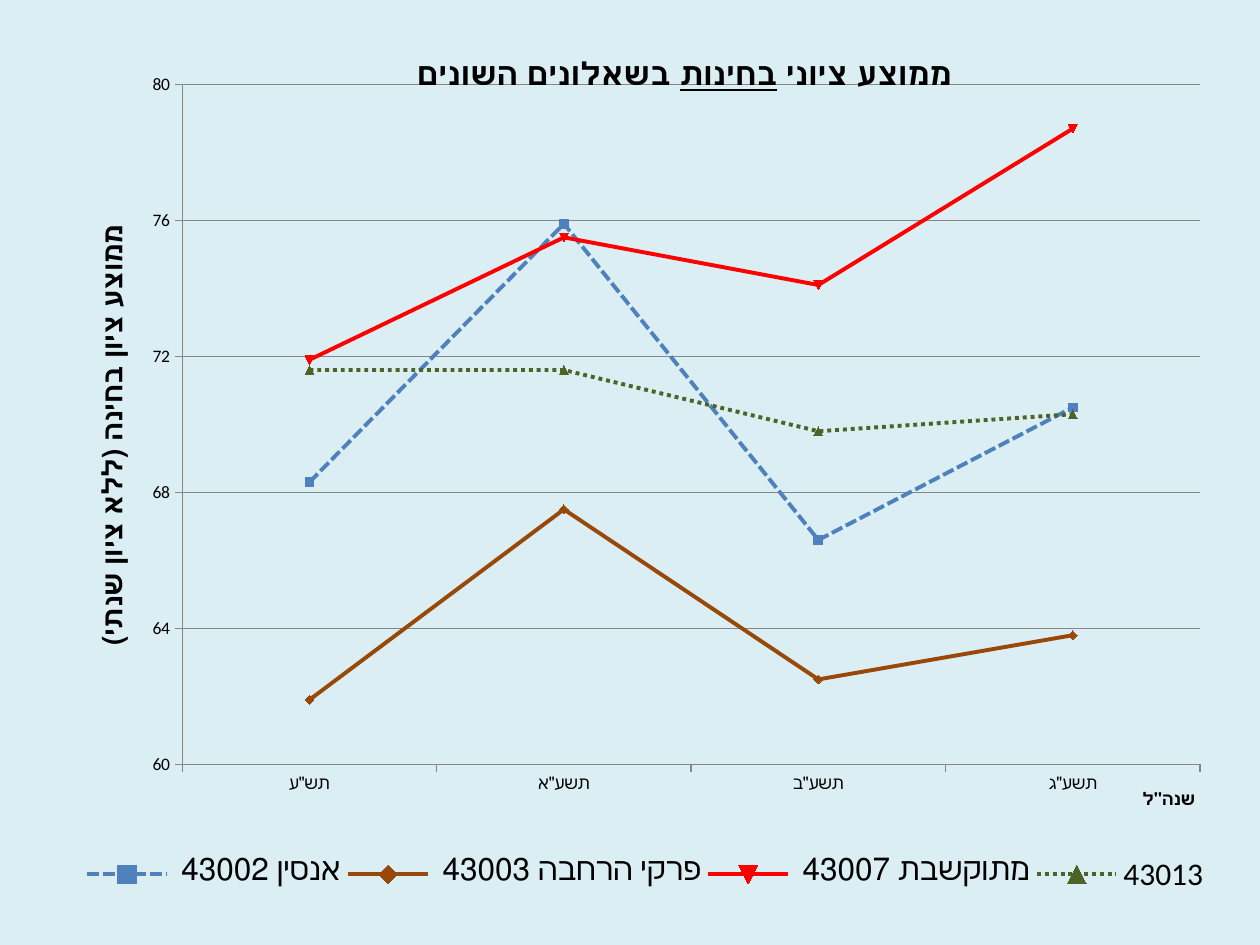
from lxml.etree import SubElement
from pptx import Presentation
from pptx.chart.data import CategoryChartData
from pptx.dml.color import RGBColor
from pptx.enum.chart import XL_CHART_TYPE, XL_LEGEND_POSITION, XL_TICK_MARK
from pptx.enum.dml import MSO_LINE
from pptx.oxml.ns import qn
from pptx.util import Cm, Pt

FONT = "Calibri"
GRAY = "868686"
YEARS = ['תש"ע', 'תשע"א', 'תשע"ב', 'תשע"ג']
EXAMS = [
    (" אנסין 43002", [68.3, 75.9, 66.6, 70.5], "4F81BD", "4F81BD", MSO_LINE.SQUARE_DOT),
    (" פרקי הרחבה 43003", [61.9, 67.5, 62.5, 63.8], "984807", "984807", None),
    (" מתוקשבת 43007", [71.9, 75.5, 74.1, 78.7], "FF0000", "FF0000", None),
    ("43013", [71.6, 71.6, 69.8, 70.3], "4F6228", "77933C", MSO_LINE.ROUND_DOT),
]
SCORE_SCALE = {
    "minimum_scale": 60,
    "maximum_scale": 80,
    "major_unit": 4,
    "has_major_gridlines": True,
    "major_tick_mark": XL_TICK_MARK.OUTSIDE,
}
YEAR_SCALE = {"major_tick_mark": XL_TICK_MARK.OUTSIDE}
LEGEND_FORMAT = {"position": XL_LEGEND_POSITION.BOTTOM, "include_in_layout": False}


def color(hex_value):
    return RGBColor.from_string(hex_value)


def apply_format(target, values):
    for name, value in values.items():
        setattr(target, name, value)


def format_font(font, size, **extra):
    apply_format(font, {"name": FONT, "size": Pt(size), **extra})
    font.color.rgb = color("000000")


def format_line(line, hex_value, width):
    line.color.rgb = color(hex_value)
    line.width = Pt(width)


def place(holder, index, **position):
    old_layout = holder.find(qn("c:layout"))
    if old_layout is not None:
        holder.remove(old_layout)
    layout = SubElement(holder, qn("c:layout"))
    holder.insert(index, layout)
    manual = SubElement(layout, qn("c:manualLayout"))
    if index == 0:
        SubElement(manual, qn("c:layoutTarget")).set("val", "inner")
    for mode in ("xMode", "yMode"):
        SubElement(manual, qn(f"c:{mode}")).set("val", "edge")
    for side, share in position.items():
        SubElement(manual, qn(f"c:{side}")).set("val", str(share))


def write_title(title, parts, size, x, y, rotation=0):
    frame = title.text_frame
    paragraph = frame.paragraphs[0]
    paragraph._p.get_or_add_pPr().set("rtl", "1")
    for text, underline in parts:
        run = paragraph.add_run()
        run.text = text
        format_font(run.font, size, bold=True, underline=underline)
    body = frame._txBody.find(qn("a:bodyPr"))
    body.set("rot", str(rotation * 60000))
    body.set("vert", "horz")
    place(title._element, 1, x=x, y=y)


def format_axis(axis, scale):
    apply_format(axis, scale)
    format_font(axis.tick_labels.font, 10)
    format_line(axis.format.line, GRAY, 0.75)


def format_exam(series, line_color, marker_color, dash):
    series.smooth = False
    line = series.format.line
    format_line(line, line_color, 2.25)
    if dash:
        line.dash_style = dash
    marker = series.marker
    marker.size = 5
    marker.format.fill.solid()
    marker.format.fill.fore_color.rgb = color(marker_color)
    format_line(marker.format.line, line_color, 0.75)


def add_score_chart(slide):
    scores = CategoryChartData()
    scores.categories = YEARS
    for name, values, *_ in EXAMS:
        scores.add_series(name, values)
    chart = slide.shapes.add_chart(
        XL_CHART_TYPE.LINE_MARKERS, Cm(0.89), Cm(0.91), Cm(24), Cm(17.6), scores
    ).chart
    format_font(chart.font, 10)
    chart.plots[0].vary_by_categories = False
    for series, (_, _, line_color, marker_color, dash) in zip(chart.series, EXAMS):
        format_exam(series, line_color, marker_color, dash)
    return chart


def add_axes(chart):
    score_axis, year_axis = chart.value_axis, chart.category_axis
    format_axis(score_axis, SCORE_SCALE)
    format_axis(year_axis, YEAR_SCALE)
    score_axis.tick_labels.number_format = "General"
    score_axis.tick_labels.number_format_is_linked = False
    format_line(score_axis.major_gridlines.format.line, GRAY, 0.75)
    write_title(score_axis.axis_title, [("ממוצע ציון בחינה (ללא ציון שנתי)", False)],
                16, 0.04, 0.2, rotation=-90)
    write_title(year_axis.axis_title, [('שנה"ל', False)], 10, 0.92, 0.85)


def add_heading(chart):
    chart.has_title = True
    write_title(chart.chart_title,
                [("ממוצע ציוני ", False), ("בחינות", True), (" בשאלונים השונים", False)],
                18, 0.31, 0.01)
    chart.chart_title._element.find(qn("c:overlay")).set("val", "1")


def add_legend(chart):
    chart.has_legend = True
    legend = chart.legend
    apply_format(legend, LEGEND_FORMAT)
    format_font(legend.font, 18)
    place(legend._element, 1, x=0.03, y=0.91, w=0.95, h=0.08)


def main():
    presentation = Presentation()
    apply_format(presentation, {"slide_width": Cm(25.4), "slide_height": Cm(19.05)})
    slide = presentation.slides.add_slide(presentation.slide_layouts[6])
    background = slide.background.fill
    background.solid()
    background.fore_color.rgb = color("DBEEF4")
    chart = add_score_chart(slide)
    add_axes(chart)
    add_heading(chart)
    add_legend(chart)
    plot_area = chart._chartSpace.chart.plotArea
    place(plot_area, 0, x=0.116, y=0.045, w=0.855, h=0.779)
    presentation.save("out.pptx")


if __name__ == "__main__":
    main()
